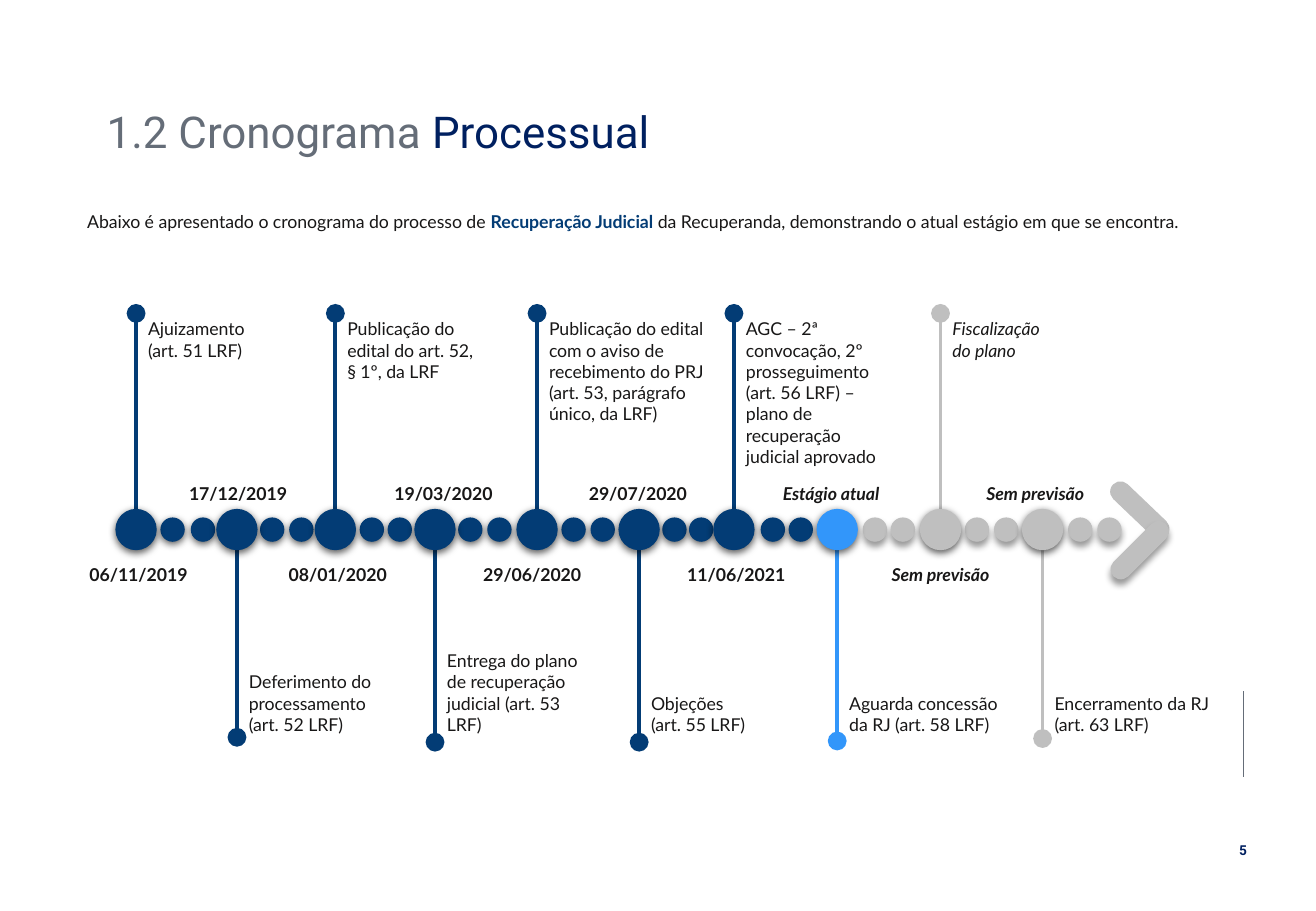
from dataclasses import dataclass
from typing import NamedTuple

from lxml import etree
from pptx import Presentation
from pptx.dml.color import RGBColor
from pptx.enum.shapes import MSO_CONNECTOR, MSO_SHAPE
from pptx.enum.text import MSO_ANCHOR, PP_ALIGN
from pptx.oxml.ns import qn
from pptx.util import Emu, Pt

PX = 9144  # 100 px to the inch
OVAL, ROUNDED = MSO_SHAPE.OVAL, MSO_SHAPE.ROUNDED_RECTANGLE
STRAIGHT = MSO_CONNECTOR.STRAIGHT
TOP, MIDDLE, BOTTOM = MSO_ANCHOR.TOP, MSO_ANCHOR.MIDDLE, MSO_ANCHOR.BOTTOM
LEFT, CENTER, JUSTIFY = PP_ALIGN.LEFT, PP_ALIGN.CENTER, PP_ALIGN.JUSTIFY


@dataclass(frozen=True)
class Theme:
    navy: str = "033C75"
    blue: str = "3296FA"
    silver: str = "BFBFBF"
    ink: str = "181717"
    slate: str = "656D78"
    title_navy: str = "002060"
    body_font: str = "Lato"
    head_font: str = "Roboto"
    title_size: float = 26
    body_size: float = 10.5
    number_size: float = 8.1


THEME = Theme()


class Shadow(NamedTuple):
    blur: float
    distance: float
    alpha: int


class Span(NamedTuple):
    text: str
    color: str = THEME.ink
    bold: bool = False
    italic: bool = False
    size: float = THEME.body_size
    font: str = THEME.body_font


class Stage(NamedTuple):
    x: int
    stem_end: int
    color: str
    note: str
    note_width: int
    date: str
    date_x: int
    steps: tuple[int, int]  # centres of the two small dots that follow
    italic_note: bool = False
    italic_date: bool = False


TIGHT, WIDE = Shadow(4.5, 1.5, 63), Shadow(4, 3, 40)
AXIS_Y, BIG, SMALL = 436, 33, 19
NOTE_TOP, NOTE_BOTTOM, NOTE_HEIGHT = 257, 610, 135
DATE_ABOVE, DATE_BELOW, DATE_WIDTH, DATE_HEIGHT = 392, 459, 120, 28

STAGES = [
    Stage(112, 258, THEME.navy, "Ajuizamento (art. 51 LRF)", 111,
          "06/11/2019", 114, (142, 167)),
    Stage(195, 607, THEME.navy, "Deferimento do processamento (art. 52 LRF)", 137,
          "17/12/2019", 196, (224, 248)),
    Stage(276, 258, THEME.navy, "Publicação do edital do art. 52, § 1º, da LRF", 130,
          "08/01/2020", 278, (306, 329)),
    Stage(358, 611, THEME.navy,
          "Entrega do plano de recuperação judicial (art. 53 LRF)", 140,
          "19/03/2020", 365, (387, 411)),
    Stage(442, 258, THEME.navy,
          "Publicação do edital com o aviso de recebimento do PRJ "
          "(art. 53, parágrafo único, da LRF)", 156,
          "29/06/2020", 438, (472, 496)),
    Stage(526, 611, THEME.navy, "Objeções\n(art. 55 LRF)", 110,
          "29/07/2020", 525, (555, 577)),
    Stage(604, 258, THEME.navy,
          "AGC – 2ª convocação, 2º prosseguimento\n"
          "(art. 56 LRF) – plano de recuperação judicial aprovado", 145,
          "11/06/2021", 606, (636, 659)),
    Stage(689, 610, THEME.blue, "Aguarda concessão da RJ (art. 58 LRF)", 150,
          "Estágio atual", 684, (720, 743), italic_date=True),
    Stage(774, 258, THEME.silver, "Fiscalização do plano", 110,
          "Sem previsão", 774, (804, 828), italic_note=True, italic_date=True),
    Stage(858, 608, THEME.silver, "Encerramento da RJ\n(art. 63 LRF)", 158,
          "Sem previsão", 852, (889, 913), italic_date=True),
]


def px(length: float) -> Emu:
    return Emu(round(length * PX))


def rgb(color: str) -> RGBColor:
    return RGBColor.from_string(color)


def format_run(run, span: Span) -> None:
    font = run.font
    font.name, font.size = span.font, Pt(span.size)
    font.bold, font.italic = span.bold, span.italic
    font.color.rgb = rgb(span.color)


def add_text(page, left: int, top: int, width: int, height: int, *spans: Span,
             align=LEFT, anchor=TOP):
    """Add a wrapped box; a single span may hold several paragraphs."""
    frame = page.shapes.add_textbox(px(left), px(top), px(width), px(height)).text_frame
    frame.word_wrap = True
    frame.vertical_anchor = anchor
    frame.text = spans[0].text
    for para in frame.paragraphs:
        para.alignment = align
        format_run(para.runs[0], spans[0])
    for span in spans[1:]:
        run = frame.paragraphs[-1].add_run()
        run.text = span.text
        format_run(run, span)
    return frame


def add_line(page, x: int, start: int, end: int, color: str, weight: float,
             oval_end: bool = False) -> None:
    line = page.shapes.add_connector(STRAIGHT, px(x), px(start), px(x), px(end))
    line.line.color.rgb = rgb(color)
    line.line.width = Pt(weight)
    if oval_end:
        etree.SubElement(line.line._get_or_add_ln(), qn("a:tailEnd"),
                         type="oval", w="lg", len="lg")
    etree.SubElement(line._element.spPr, qn("a:effectLst"))


def add_solid(page, kind, x: int, y: int, width: int, height: int, color: str,
              shadow: Shadow | None = None):
    """Add a filled shape centred on x, y, with an optional downward shadow."""
    shape = page.shapes.add_shape(kind, px(x - width / 2), px(y - height / 2),
                                  px(width), px(height))
    shape.shadow.inherit = False
    shape.fill.solid()
    shape.fill.fore_color.rgb = rgb(color)
    shape.line.color.rgb = rgb(color)
    shape.line.width = Pt(0.75)
    if shadow:
        effects = shape._element.spPr.find(qn("a:effectLst"))
        outer = etree.SubElement(effects, qn("a:outerShdw"),
                                 blurRad=str(Pt(shadow.blur)),
                                 dist=str(Pt(shadow.distance)),
                                 dir="5400000", rotWithShape="0")
        tint = etree.SubElement(outer, qn("a:srgbClr"), val="000000")
        etree.SubElement(tint, qn("a:alpha"), val=str(shadow.alpha * 1000))
    return shape


def add_arrowhead(page) -> None:
    for y, angle, shadow in ((420, 43.7, None), (453, 315, WIDE)):
        bar = add_solid(page, ROUNDED, 938, y, 60, 16, THEME.silver, shadow)
        bar.adjustments[0] = 0.5
        bar.rotation = angle


def add_stage(page, stage: Stage) -> None:
    above = stage.stem_end < AXIS_Y
    add_line(page, stage.x, AXIS_Y, stage.stem_end, stage.color, 2.25, oval_end=True)
    add_text(page, stage.x, NOTE_TOP if above else NOTE_BOTTOM - NOTE_HEIGHT,
             stage.note_width, NOTE_HEIGHT,
             Span(stage.note, italic=stage.italic_note),
             anchor=TOP if above else BOTTOM)
    add_text(page, stage.date_x - DATE_WIDTH // 2, DATE_BELOW if above else DATE_ABOVE,
             DATE_WIDTH, DATE_HEIGHT,
             Span(stage.date, bold=True, italic=stage.italic_date),
             align=CENTER, anchor=MIDDLE)
    step_color = THEME.navy if stage.color == THEME.navy else THEME.silver
    if stage.x == 689:
        step_color = THEME.silver
    step_shadow = TIGHT if step_color == THEME.navy else WIDE
    for x in stage.steps:
        add_solid(page, OVAL, x, AXIS_Y, SMALL, SMALL, step_color, step_shadow)
    add_solid(page, OVAL, stage.x, AXIS_Y, BIG, BIG, stage.color, TIGHT)


def main() -> None:
    deck = Presentation()
    deck.slide_width, deck.slide_height = px(1083), px(750)
    page = deck.slides.add_slide(deck.slide_layouts[6])

    add_line(page, 1023, 569, 640, THEME.slate, 0.5)
    add_text(page, 1006, 688, 34, 24,
             Span("5", THEME.title_navy, bold=True, size=THEME.number_size,
                  font=THEME.head_font), align=CENTER)
    title = add_text(
        page, 78, 86, 818, 53,
        Span("1.2 Cronograma ", THEME.slate, size=THEME.title_size, font=THEME.head_font),
        Span("Processual", THEME.title_navy, size=THEME.title_size, font=THEME.head_font))
    title.paragraphs[0].line_spacing = 0.9
    intro = add_text(
        page, 31, 166, 1017, 30,
        Span("Abaixo é apresentado o cronograma do processo de "),
        Span("Recuperação Judicial ", THEME.navy, bold=True),
        Span("da Recuperanda, demonstrando o atual estágio em que se encontra."),
        align=JUSTIFY)
    intro.paragraphs[0].line_spacing = 1.14
    intro.paragraphs[0]._p.get_or_add_pPr().set("indent", str(px(31)))

    add_arrowhead(page)
    for stage in STAGES:
        add_stage(page, stage)
    deck.save("out.pptx")


if __name__ == "__main__":
    main()
